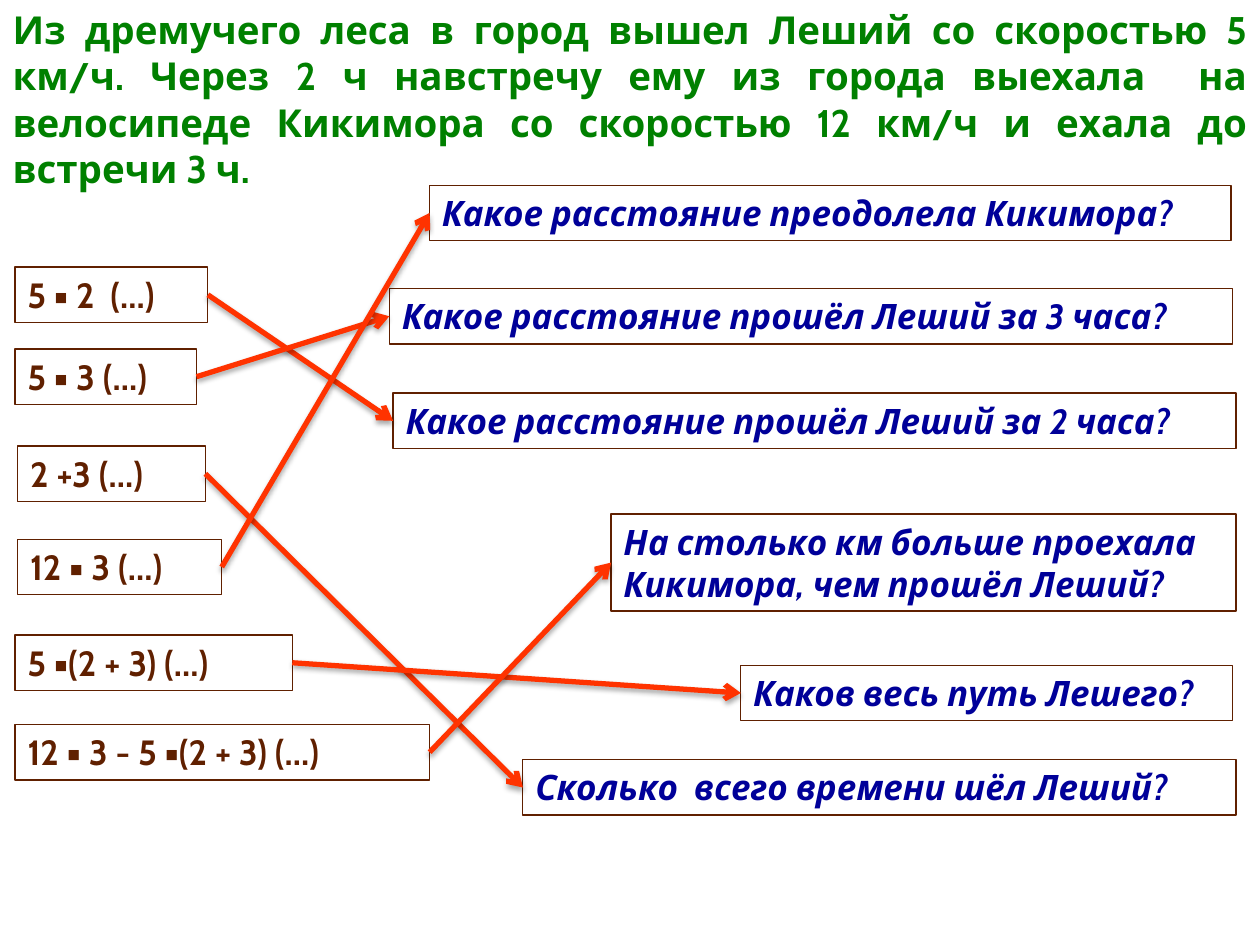
from dataclasses import dataclass

from lxml.etree import SubElement
from pptx import Presentation
from pptx.dml.color import RGBColor
from pptx.enum.shapes import MSO_CONNECTOR as Connector, MSO_SHAPE as Shape
from pptx.enum.text import MSO_ANCHOR as Anchor, MSO_AUTO_SIZE as AutoSize, PP_ALIGN as Align
from pptx.oxml.ns import qn
from pptx.util import Inches, Pt

FONT = "Cabin"
GREEN, BROWN, BLUE, RED = "008000", "602000", "000099", "FF3300"
LEFT_SITE, RIGHT_SITE = 1, 3
ONE_LINE, TWO_LINES = 4.4, 7.7

presentation = Presentation()
presentation.slide_width, presentation.slide_height = Inches(10), Inches(7.5)
COLUMN = presentation.slide_width / 100
ROW = presentation.slide_height / 75


@dataclass
class Box:
    text: str
    column: float
    row: float
    columns: float
    rows: float = ONE_LINE


@dataclass
class Match:
    expression: Box
    question: Box


PROBLEM = (
    "Из дремучего леса в город вышел Леший со скоростью 5 км/ч. "
    "Через 2 ч навстречу ему из города выехала  на велосипеде Кикимора "
    "со скоростью 12 км/ч и ехала до встречи 3 ч."
)

MATCHES = [
    Match(Box("5 ▪ 2  (…)", 1.2, 21.2, 15.3),
          Box("Какое расстояние прошёл Леший за 2 часа?", 31.2, 31.2, 66.9)),
    Match(Box("5 ▪ 3 (…)", 1.2, 27.7, 14.4),
          Box("Какое расстояние прошёл Леший за 3 часа?", 30.9, 22.9, 66.9)),
    Match(Box("2 +3 (…)", 1.4, 35.4, 14.9),
          Box("Сколько  всего времени шёл Леший?", 41.5, 60.3, 56.6)),
    Match(Box("5 ▪(2 + 3) (…)", 1.2, 50.4, 22),
          Box("Каков весь путь Лешего?", 58.8, 52.8, 39)),
    Match(Box("12 ▪ 3 (…)", 1.4, 42.8, 16.2),
          Box("Какое расстояние преодолела Кикимора?", 34.1, 14.7, 63.6)),
    Match(Box("12 ▪ 3 - 5 ▪(2 + 3) (…)", 1.2, 57.5, 32.9),
          Box("На столько км больше проехала\nКикимора, чем прошёл Леший?",
              48.5, 40.8, 49.6, TWO_LINES)),
]


def color(value: str) -> RGBColor:
    return RGBColor.from_string(value)


def place(shape, column: float, row: float, columns: float, rows: float) -> None:
    shape.left, shape.top = round(column * COLUMN), round(row * ROW)
    shape.width, shape.height = round(columns * COLUMN), round(rows * ROW)


def write(shape, text: str, size: float, ink: str, align, italic: bool = False) -> None:
    frame = shape.text_frame
    frame.text = text
    frame.word_wrap = True
    frame.auto_size = AutoSize.SHAPE_TO_FIT_TEXT
    frame.vertical_anchor = Anchor.TOP
    for paragraph in frame.paragraphs:
        paragraph.alignment = align
        for run in paragraph.runs:
            font = run.font
            font.name, font.size = FONT, Pt(size)
            font.bold, font.italic = True, italic
            font.color.rgb = color(ink)


def draw_box(slide, box: Box, ink: str, italic: bool = False):
    shape = slide.shapes.add_shape(Shape.RECTANGLE, 0, 0, 0, 0)
    place(shape, box.column, box.row, box.columns, box.rows)
    shape.shadow.inherit = False
    shape.fill.background()
    shape.line.color.rgb = color(BROWN)
    shape.line.width = Pt(0.75)
    write(shape, box.text, 20, ink, Align.LEFT, italic)
    return shape


def draw_arrow(slide, start, end) -> None:
    arrow = slide.shapes.add_connector(Connector.STRAIGHT, 0, 0, 0, 0)
    arrow.begin_connect(start, RIGHT_SITE)
    arrow.end_connect(end, LEFT_SITE)
    arrow.line.color.rgb = color(RED)
    arrow.line.width = Pt(3)
    properties = arrow._element.spPr
    SubElement(properties.find(qn("a:ln")), qn("a:tailEnd"), type="arrow")
    # Soft shadow straight below the line
    effects = SubElement(properties, qn("a:effectLst"))
    shadow = SubElement(effects, qn("a:outerShdw"), blurRad=str(Pt(3.1)),
                        dist=str(Pt(1.8)), dir="5400000", rotWithShape="0")
    black = SubElement(shadow, qn("a:srgbClr"), val="000000")
    SubElement(black, qn("a:alpha"), val="35000")


def main() -> None:
    slide = presentation.slides.add_slide(presentation.slide_layouts[5])

    # Problem statement
    title = slide.shapes.title
    place(title, 0, 0, 100, 15.8)
    write(title, PROBLEM, 22, GREEN, Align.JUSTIFY)

    # Expressions and questions, then the arrows above them
    pairs = [(draw_box(slide, match.expression, BROWN),
              draw_box(slide, match.question, BLUE, italic=True))
             for match in MATCHES]
    for expression, question in pairs:
        draw_arrow(slide, expression, question)

    presentation.save("out.pptx")


if __name__ == "__main__":
    main()
